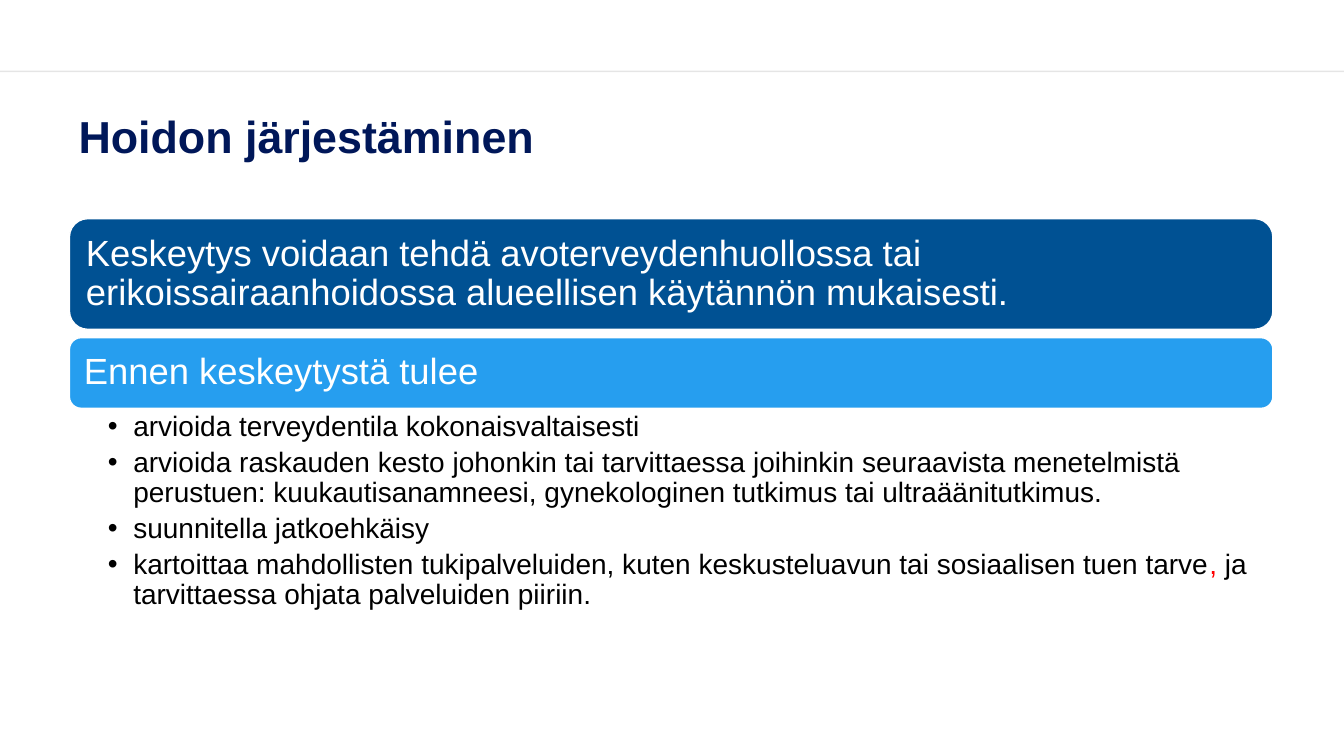
from dataclasses import dataclass

from lxml.etree import SubElement
from pptx import Presentation
from pptx.dml.color import RGBColor
from pptx.enum.shapes import MSO_CONNECTOR, MSO_SHAPE
from pptx.enum.text import MSO_ANCHOR, PP_ALIGN
from pptx.oxml.ns import qn
from pptx.util import Cm, Pt

COLORS = {
    "title": "001759",
    "setting": "005193",
    "before": "269EEF",
    "white": "FFFFFF",
    "black": "000000",
    "red": "FF0000",
}
FONT = "Arial"
SLIDE_WIDTH, SLIDE_HEIGHT = 33.87, 19.05
LEFT, WIDTH = 1.75, 30.33


@dataclass(frozen=True)
class Banner:
    text: str
    top: float
    height: float
    color: str


BANNERS = [
    Banner("Keskeytys voidaan tehdä avoterveydenhuollossa tai erikoissairaanhoidossa "
           "alueellisen käytännön mukaisesti.", 5.51, 2.79, "setting"),
    Banner("Ennen keskeytystä tulee", 8.51, 1.78, "before"),
]

# Each task is a list of (text, colour) parts
TASKS = [
    [("arvioida terveydentila kokonaisvaltaisesti", "black")],
    [("arvioida raskauden kesto johonkin tai tarvittaessa joihinkin seuraavista "
      "menetelmistä perustuen: kuukautisanamneesi, gynekologinen tutkimus tai "
      "ultraäänitutkimus.", "black")],
    [("suunnitella jatkoehkäisy", "black")],
    [("kartoittaa mahdollisten tukipalveluiden, kuten keskusteluavun tai sosiaalisen "
      "tuen tarve", "black"),
     (",", "red"),
     (" ja tarvittaessa ohjata palveluiden piiriin.", "black")],
]


def rgb(name: str) -> RGBColor:
    return RGBColor.from_string(COLORS[name])


def set_frame(frame, anchor, left: float, top: float, right: float, bottom: float) -> None:
    frame.word_wrap = True
    frame.vertical_anchor = anchor
    frame.margin_left, frame.margin_top = Cm(left), Cm(top)
    frame.margin_right, frame.margin_bottom = Cm(right), Cm(bottom)


def set_paragraph(paragraph, size: float, color: str, bold: bool = False) -> None:
    paragraph.alignment = PP_ALIGN.LEFT
    paragraph.line_spacing = 0.9
    font = paragraph.font
    font.name, font.size, font.bold = FONT, Pt(size), bold
    font.color.rgb = rgb(color)


def add_bullet(paragraph) -> None:
    properties = paragraph._p.get_or_add_pPr()
    properties.set("marL", str(Cm(0.64)))
    properties.set("indent", str(-Cm(0.64)))
    SubElement(properties, qn("a:buFont"), typeface=FONT)
    SubElement(properties, qn("a:buChar"), char="•")


def add_header_rule(slide) -> None:
    rule = slide.shapes.add_connector(
        MSO_CONNECTOR.STRAIGHT, Cm(0), Cm(1.8), Cm(SLIDE_WIDTH), Cm(1.8))
    rule.line.width = Pt(1)
    rule.line.color.rgb = rgb("black")
    properties = rule._element.spPr
    SubElement(next(properties.iter(qn("a:srgbClr"))), qn("a:alpha"), val="10000")
    SubElement(properties, qn("a:effectLst"))


def add_title(slide, text: str) -> None:
    box = slide.shapes.add_textbox(Cm(1.73), Cm(2.36), Cm(WIDTH), Cm(2.31))
    set_frame(box.text_frame, MSO_ANCHOR.MIDDLE, 0.25, 0.13, 0.25, 0.13)
    heading = box.text_frame.paragraphs[0]
    heading.text = text
    set_paragraph(heading, 32, "title", bold=True)


def add_banner(slide, banner: Banner) -> None:
    panel = slide.shapes.add_shape(
        MSO_SHAPE.ROUNDED_RECTANGLE, Cm(LEFT), Cm(banner.top), Cm(WIDTH), Cm(banner.height))
    panel.shadow.inherit = False
    panel.fill.solid()
    panel.fill.fore_color.rgb = rgb(banner.color)
    panel.line.color.rgb = rgb("white")
    panel.line.width = Pt(1)
    set_frame(panel.text_frame, MSO_ANCHOR.MIDDLE, 0.28, 0.28, 0.28, 0.28)
    statement = panel.text_frame.paragraphs[0]
    statement.text = banner.text
    set_paragraph(statement, 26, "white")


def add_tasks(slide) -> None:
    box = slide.shapes.add_textbox(Cm(LEFT), Cm(10.29), Cm(WIDTH), Cm(5.08))
    frame = box.text_frame
    set_frame(frame, MSO_ANCHOR.TOP, 0.97, 0.1, 0.51, 0.1)
    for index, parts in enumerate(TASKS):
        task = frame.add_paragraph() if index else frame.paragraphs[0]
        add_bullet(task)
        set_paragraph(task, 20, "black")
        task.space_after = Pt(4)
        for text, color in parts:
            run = task.add_run()
            run.text = text
            if color != "black":
                run.font.color.rgb = rgb(color)


def main() -> None:
    deck = Presentation()
    deck.slide_width, deck.slide_height = Cm(SLIDE_WIDTH), Cm(SLIDE_HEIGHT)
    slide = deck.slides.add_slide(deck.slide_layouts[6])

    # Header
    add_header_rule(slide)
    add_title(slide, "Hoidon järjestäminen")

    # Statements and the tasks under the last one
    for banner in BANNERS:
        add_banner(slide, banner)
    add_tasks(slide)

    deck.save("out.pptx")


if __name__ == "__main__":
    main()
